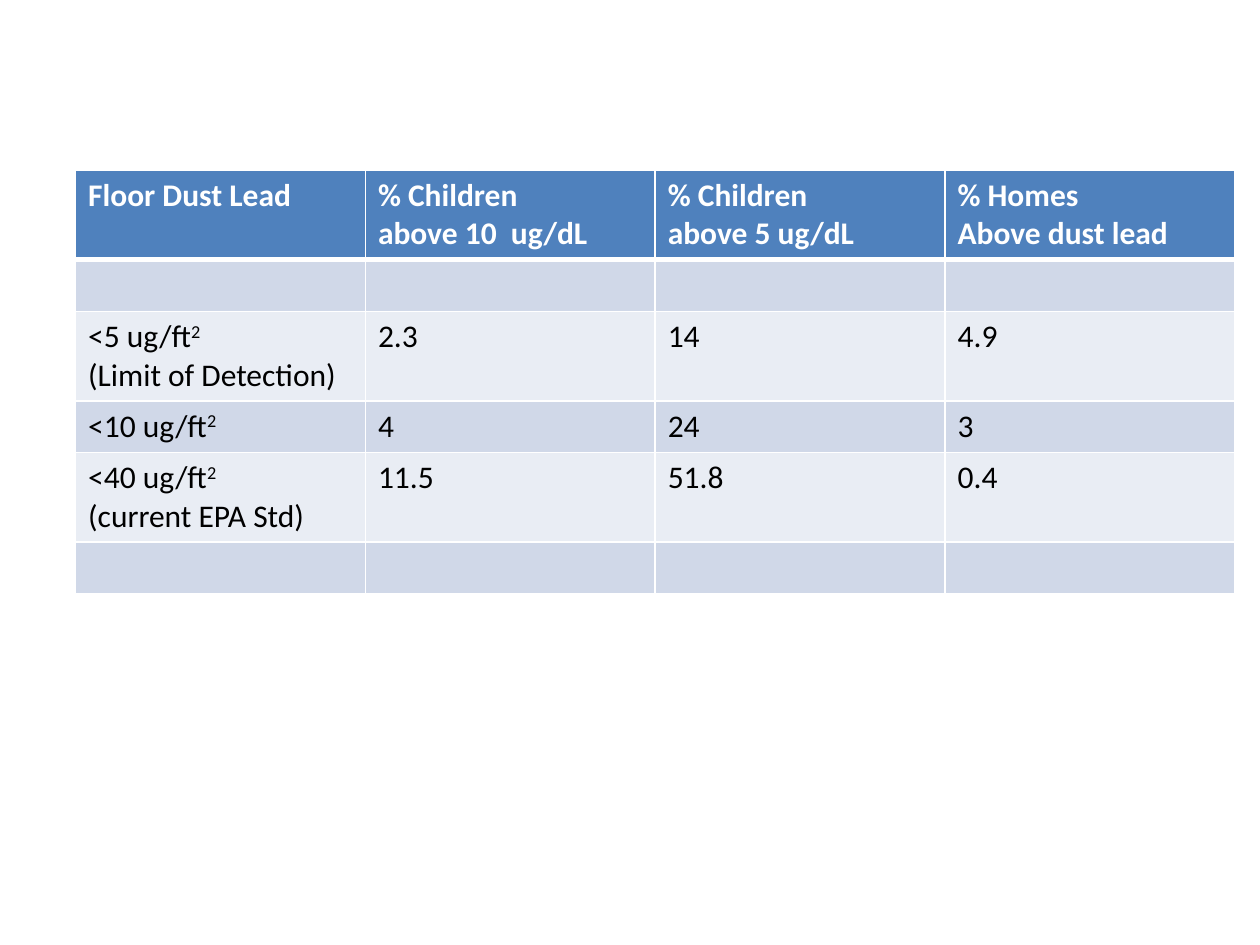
from pptx import Presentation
from pptx.dml.color import RGBColor
from pptx.oxml import parse_xml
from pptx.oxml.ns import nsdecls
from pptx.util import Inches, Pt

WHITE = RGBColor(0xFF, 0xFF, 0xFF)
BLACK = RGBColor(0x00, 0x00, 0x00)
BLUE = RGBColor(0x4F, 0x81, 0xBD)
BAND_DARK = RGBColor(0xD0, 0xD8, 0xE8)
BAND_LIGHT = RGBColor(0xE9, 0xED, 0xF4)

DUST_ROWS = [
    ["Floor Dust Lead", "% Children\nabove 10  ug/dL", "% Children\nabove 5 ug/dL", "% Homes\nAbove dust lead"],
    [""] * 4,
    ["<5 ug/ft²\n(Limit of Detection)", "2.3", "14", "4.9"],
    ["<10 ug/ft²", "4", "24", "3"],
    ["<40 ug/ft²\n(current EPA Std)", "11.5", "51.8", "0.4"],
    [""] * 4,
]


class SlideBuilder:
    """Holds the style and the current slide, and draws the table on it."""

    font = "Calibri"
    size = Pt(18)
    row_heights = {1: Inches(0.41), 2: Inches(0.7)}

    def __init__(self, prs):
        self.prs = prs
        self.s = prs.slides.add_slide(prs.slide_layouts[6])

    def table(self, x, y, width, rows):
        w, h = self.prs.slide_width, self.prs.slide_height
        lines = [max(text.count("\n") + 1 for text in row) for row in rows]
        heights = [self.row_heights[n] for n in lines]
        frame = self.s.shapes.add_table(len(rows), len(rows[0]), int(x * w), int(y * h),
                                        int(width * w), sum(heights))
        table = frame.table
        for i, row in enumerate(rows):
            table.rows[i].height = heights[i]
            fill = BLUE if i == 0 else BAND_DARK if i % 2 else BAND_LIGHT
            for j, text in enumerate(row):
                cell = table.cell(i, j)
                self.borders(cell, top=3 if i == 1 else 1, bottom=3 if i == 0 else 1)
                cell.fill.solid()
                cell.fill.fore_color.rgb = fill
                self.cell_text(cell.text_frame, text, header=i == 0)

    def borders(self, cell, top, bottom):
        tcPr = cell._tc.get_or_add_tcPr()
        for side, width in (("L", 1), ("R", 1), ("T", top), ("B", bottom)):
            tcPr.append(parse_xml(
                f'<a:ln{side} {nsdecls("a")} w="{Pt(width)}"><a:solidFill>'
                f'<a:srgbClr val="{WHITE}"/></a:solidFill></a:ln{side}>'))

    def cell_text(self, tf, text, header):
        tf.text = text.replace("²", "")
        for p, line in zip(tf.paragraphs, text.split("\n")):
            p.font.size = self.size
            if line.endswith("²"):
                r = p.add_run()
                r.text = "2"
                r.font._element.set("baseline", "30000")
            for r in p.runs:
                r.font.name = self.font
                r.font.size = self.size
                r.font.bold = header
                r.font.color.rgb = WHITE if header else BLACK


def main():
    prs = Presentation()
    prs.slide_width, prs.slide_height = Inches(10), Inches(7.5)
    slide = SlideBuilder(prs)
    slide.table(0.06, 0.18, 0.92, DUST_ROWS)
    prs.save("out.pptx")


if __name__ == "__main__":
    main()
